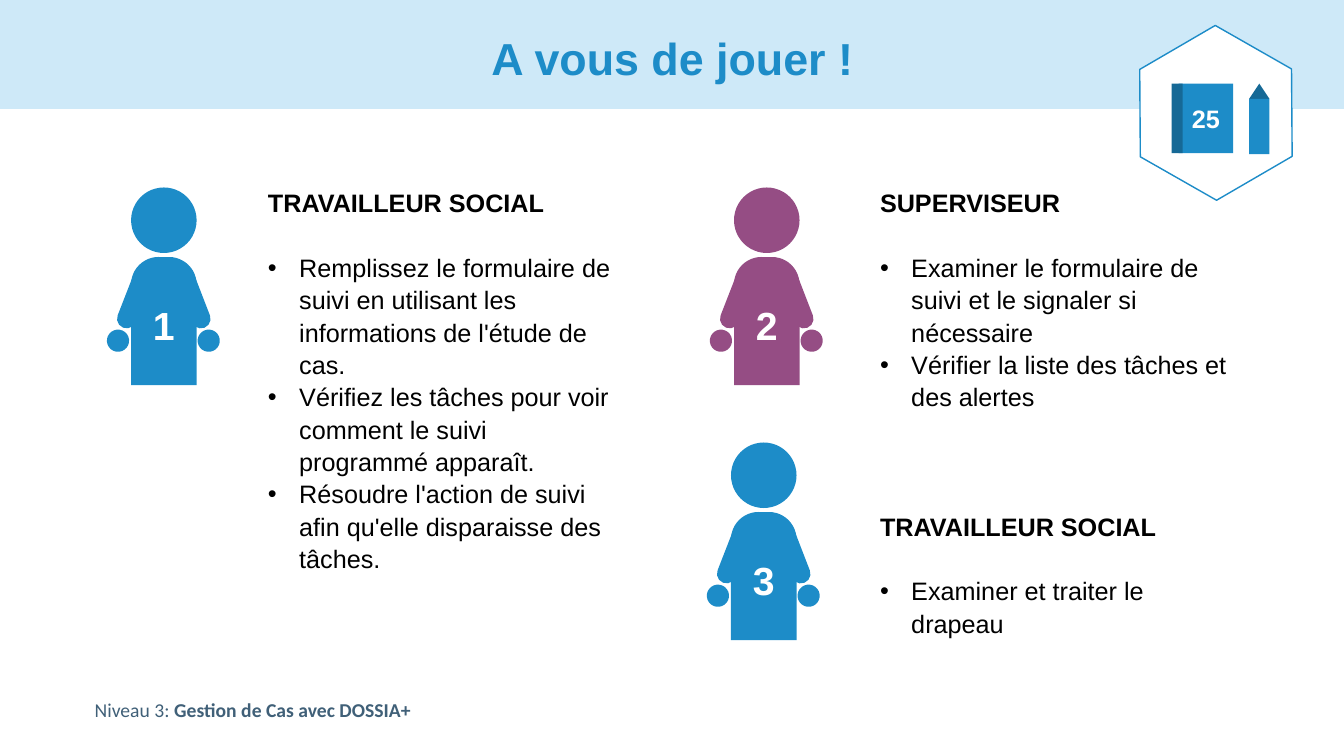
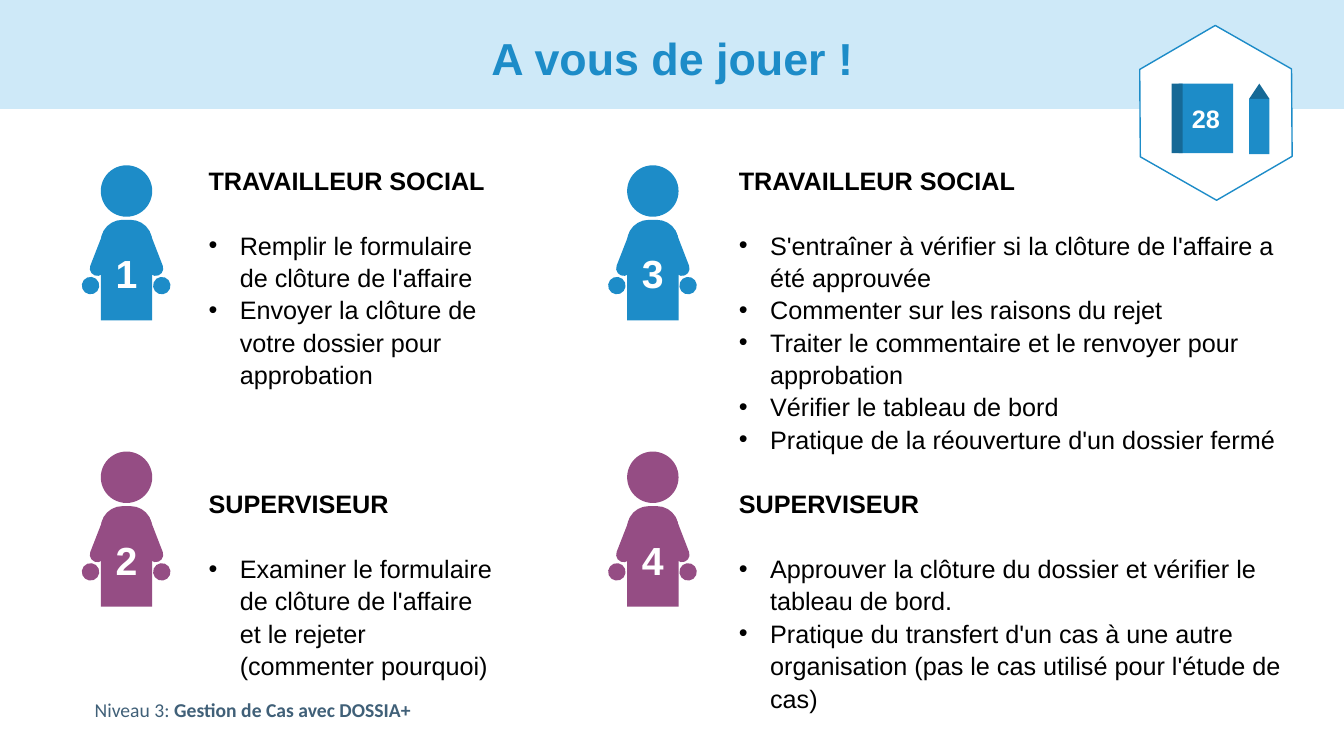
from dataclasses import dataclass

from lxml import etree
from pptx import Presentation
from pptx.dml.color import RGBColor
from pptx.enum.shapes import MSO_SHAPE
from pptx.enum.text import MSO_ANCHOR, MSO_AUTO_SIZE, PP_ALIGN
from pptx.oxml.ns import qn
from pptx.util import Inches, Pt

RECT, OVAL, HEXAGON = MSO_SHAPE.RECTANGLE, MSO_SHAPE.OVAL, MSO_SHAPE.HEXAGON
TRIANGLE, ROUND_TOP = MSO_SHAPE.ISOSCELES_TRIANGLE, MSO_SHAPE.ROUND_2_SAME_RECTANGLE
CENTER, MIDDLE = PP_ALIGN.CENTER, MSO_ANCHOR.MIDDLE
GROW, NO_FIT = MSO_AUTO_SIZE.SHAPE_TO_FIT_TEXT, MSO_AUTO_SIZE.NONE

COLORS = {
    "band": "CEE9F8", "blue": "1D8CC8", "dark_blue": "166996", "purple": "954D84",
    "footer": "406078", "text": "000000", "white": "FFFFFF",
}
TITLE = "A vous de jouer !"
WORKER, SUPERVISOR = "TRAVAILLEUR SOCIAL", "SUPERVISEUR"
LINE_SPACING = 1.07
LINE_PT = 23.1  # height of one line of body text
INDENT = Inches(0.31)


@dataclass
class Person:
    number: int
    color: str
    x: float
    y: float


@dataclass
class Section:
    heading: str
    bullets: list[str]
    lines_before: int = 0


@dataclass
class Column:
    x: float
    y: float
    w: float
    h: float
    sections: list[Section]


@dataclass
class Exercise:
    page: int
    scale: float
    people: list[Person]
    columns: list[Column]


@dataclass
class Part:
    kind: int
    x: float
    y: float
    w: float
    h: float
    rotation: float = 0
    adjust: tuple = ()


# Parts of a full-size person, from the left of the body and the top of the head
BODY = Part(ROUND_TOP, 0, 0.69, 0.65, 1.27, adjust=(0.419, 0))
LIMBS = [
    Part(OVAL, 0, 0, 0.65, 0.65),
    Part(ROUND_TOP, -0.07, 0.84, 0.19, 0.57, 201.3, (0.493, 0)),
    Part(OVAL, -0.24, 1.41, 0.22, 0.22, 8.5),
    Part(ROUND_TOP, 0.53, 0.84, 0.19, 0.57, 158.9, (0.493, 0)),
    Part(OVAL, 0.66, 1.41, 0.22, 0.22, 351.8),
]

EXERCISES = [
    Exercise(25, 1, [
        Person(1, "blue", 1.3, 1.86),
        Person(2, "purple", 7.28, 1.86),
        Person(3, "blue", 7.25, 4.39),
    ], [
        Column(2.56, 1.79, 3.66, 3.97, [
            Section(WORKER, [
                "Remplissez le formulaire de suivi en utilisant les informations de l'étude de cas.",
                "Vérifiez les tâches pour voir comment le suivi programmé apparaît.",
                "Résoudre l'action de suivi afin qu'elle disparaisse des tâches.",
            ]),
        ]),
        Column(8.63, 1.79, 3.66, 4.61, [
            Section(SUPERVISOR, [
                "Examiner le formulaire de suivi et le signaler si nécessaire",
                "Vérifier la liste des tâches et des alertes",
            ]),
            Section(WORKER, ["Examiner et traiter le drapeau"], 3),
        ]),
    ]),
    Exercise(28, 0.785, [
        Person(1, "blue", 1, 1.64),
        Person(2, "purple", 1, 4.48),
        Person(3, "blue", 6.22, 1.64),
        Person(4, "purple", 6.22, 4.48),
    ], [
        Column(1.97, 1.57, 3.07, 5.26, [
            Section(WORKER, [
                "Remplir le formulaire de clôture de l'affaire",
                "Envoyer la clôture de votre dossier pour approbation",
            ]),
            Section(SUPERVISOR, [
                "Examiner le formulaire de clôture de l'affaire et le rejeter (commenter pourquoi)",
            ], 3),
        ]),
        Column(7.23, 1.57, 5.61, 5.59, [
            Section(WORKER, [
                "S'entraîner à vérifier si la clôture de l'affaire a été approuvée",
                "Commenter sur les raisons du rejet",
                "Traiter le commentaire et le renvoyer pour approbation",
                "Vérifier le tableau de bord",
                "Pratique de la réouverture d'un dossier fermé",
            ]),
            Section(SUPERVISOR, [
                "Approuver la clôture du dossier et vérifier le tableau de bord.",
                "Pratique du transfert d'un cas à une autre organisation "
                "(pas le cas utilisé pour l'étude de cas)",
            ], 1),
        ]),
    ]),
]


def rgb(name: str) -> RGBColor:
    return RGBColor.from_string(COLORS[name])


def add_text(p, text: str, *, size: float = 18, color: str = "text",
             bold: bool = False, font: str = "Arial", align=None) -> None:
    r = p.add_run()
    r.text = text
    r.font.size, r.font.bold, r.font.name = Pt(size), bold, font
    r.font.color.rgb = rgb(color)
    if align is not None:
        p.alignment = align


def add_part(shapes, part: Part, color: str, line: str | None = None):
    sp = shapes.add_shape(part.kind, Inches(part.x), Inches(part.y),
                          Inches(part.w), Inches(part.h))
    sp.shadow.inherit = False
    sp.rotation = part.rotation
    for i, value in enumerate(part.adjust):
        sp.adjustments[i] = value
    sp.fill.solid()
    sp.fill.fore_color.rgb = rgb(color)
    if line:
        sp.line.color.rgb = rgb(line)
        sp.line.width = Pt(1)
    else:
        sp.line.fill.background()
    return sp


def add_label(sp, text: str, size: float) -> None:
    tf = sp.text_frame
    tf.word_wrap = False
    tf.margin_left = tf.margin_right = 0
    tf.vertical_anchor = MIDDLE
    add_text(tf.paragraphs[0], text, size=size, color="white", bold=True, align=CENTER)


def add_box(s, x: float, y: float, w: float, h: float):
    sp = s.shapes.add_textbox(Inches(x), Inches(y), Inches(w), Inches(h))
    sp.text_frame.word_wrap = True
    sp.text_frame.auto_size = GROW
    return sp


def move_to_layout(s, layout) -> None:
    """Draw the band and the footer, then hand them to the layout."""
    band = add_part(s.shapes, Part(RECT, 0, 0, 13.33, 1.08), "band")
    footer = add_box(s, 0.84, 6.87, 4.55, 0.34)
    p = footer.text_frame.paragraphs[0]
    add_text(p, "Niveau 3: ", size=14, color="footer", font="Calibri")
    add_text(p, "Gestion de Cas avec DOSSIA+", size=14, color="footer", bold=True, font="Calibri")
    for i, sp in enumerate((band, footer)):
        layout.shapes.element.insert(2 + i, sp.element)


def add_title(s) -> None:
    sp = s.shapes.title
    sp.left, sp.top, sp.width, sp.height = Inches(0.92), Inches(0.13), Inches(11.5), Inches(0.95)
    tf = sp.text_frame
    tf.auto_size = NO_FIT
    tf.vertical_anchor = MIDDLE
    p = tf.paragraphs[0]
    p.line_spacing = 0.9
    add_text(p, TITLE, size=32, color="blue", bold=True, align=CENTER)


def add_person(s, person: Person, scale: float) -> None:
    shapes = s.shapes.add_group_shape().shapes
    for part in [BODY, *LIMBS]:
        placed = Part(part.kind, person.x + part.x * scale, person.y + part.y * scale,
                      part.w * scale, part.h * scale, part.rotation, part.adjust)
        sp = add_part(shapes, placed, person.color)
        if part is BODY:
            add_label(sp, str(person.number), 28)


def add_bullet(p) -> None:
    pPr = p._p.get_or_add_pPr()
    pPr.set("marL", str(INDENT))
    pPr.set("indent", str(-INDENT))
    etree.SubElement(pPr, qn("a:buFont")).set("typeface", "Arial")
    etree.SubElement(pPr, qn("a:buChar")).set("char", "•")


def add_column(s, column: Column) -> None:
    tf = add_box(s, column.x, column.y, column.w, column.h).text_frame
    for i, section in enumerate(column.sections):
        p = tf.add_paragraph() if i else tf.paragraphs[0]
        p.line_spacing = LINE_SPACING
        p.space_before = Pt(section.lines_before * LINE_PT)
        p.space_after = Pt(LINE_PT)
        add_text(p, section.heading, bold=True)
        for bullet in section.bullets:
            p = tf.add_paragraph()
            p.line_spacing = LINE_SPACING
            add_bullet(p)
            add_text(p, bullet)


def add_badge(s, page: int) -> None:
    shapes = s.shapes.add_group_shape().shapes
    add_part(shapes, Part(HEXAGON, 11.19, 0.37, 1.74, 1.5, 29.7, (0.29, 1.155)), "white", "blue")
    # Workbook
    add_label(add_part(shapes, Part(RECT, 11.69, 0.83, 0.54, 0.69), "blue"), str(page), 18)
    add_part(shapes, Part(RECT, 11.62, 0.83, 0.11, 0.69), "dark_blue")
    # Pencil
    add_part(shapes, Part(TRIANGLE, 12.39, 0.83, 0.2, 0.15), "dark_blue")
    add_part(shapes, Part(RECT, 12.39, 0.98, 0.2, 0.55), "blue")


def main() -> None:
    prs = Presentation()
    prs.slide_width, prs.slide_height = Inches(13.33), Inches(7.5)
    layout = prs.slide_layouts[5]
    for i, exercise in enumerate(EXERCISES):
        s = prs.slides.add_slide(layout)
        if i == 0:
            move_to_layout(s, layout)
        add_title(s)
        for person in exercise.people:
            add_person(s, person, exercise.scale)
        for column in exercise.columns:
            add_column(s, column)
        add_badge(s, exercise.page)
    prs.save("out.pptx")


if __name__ == "__main__":
    main()
